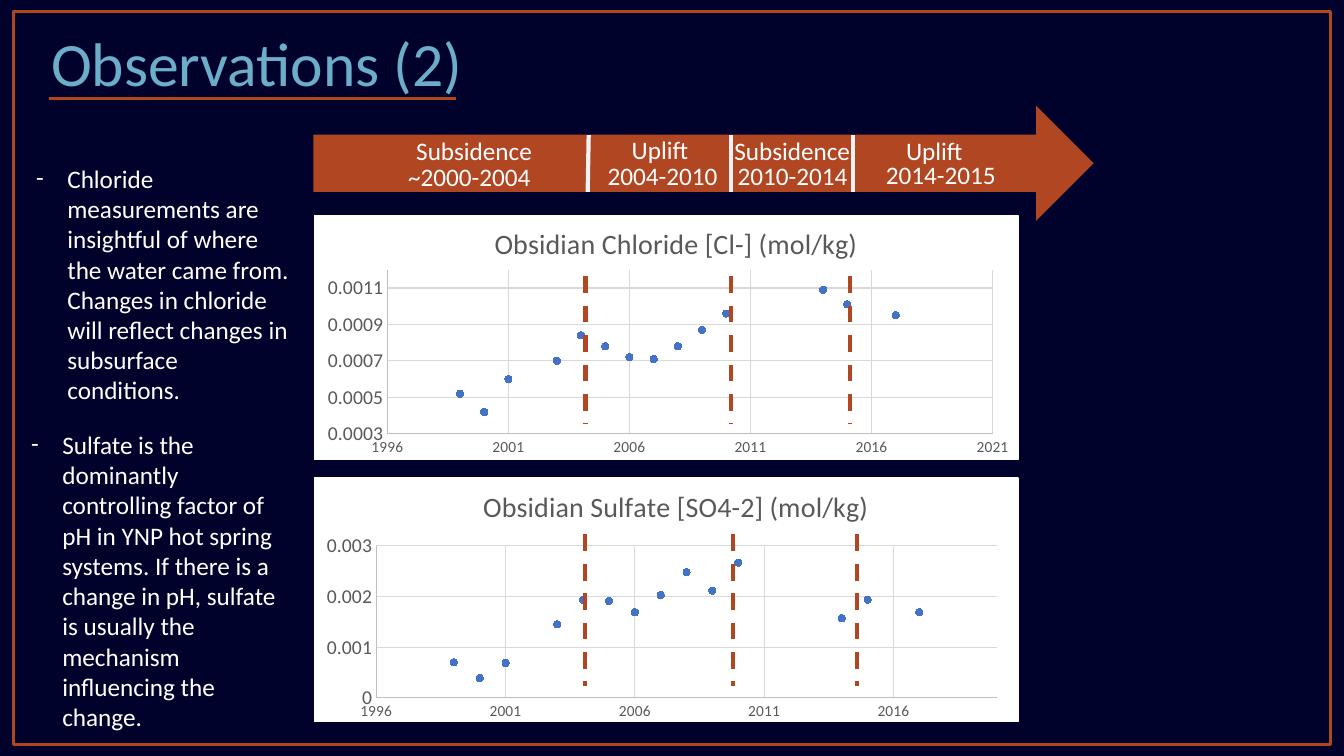
from lxml.etree import SubElement
from pptx import Presentation
from pptx.chart.data import XyChartData
from pptx.dml.color import RGBColor
from pptx.enum.chart import XL_CHART_TYPE, XL_MARKER_STYLE, XL_TICK_MARK
from pptx.enum.dml import MSO_LINE
from pptx.enum.shapes import MSO_CONNECTOR, MSO_SHAPE
from pptx.enum.text import MSO_ANCHOR
from pptx.oxml import parse_xml
from pptx.oxml.ns import nsdecls, qn
from pptx.util import Pt

NAVY = RGBColor(0x00, 0x02, 0x2C)
SKY = RGBColor(0x6C, 0xAD, 0xCA)
RUST = RGBColor(0xB1, 0x46, 0x23)
WHITE = RGBColor(0xFF, 0xFF, 0xFF)
PALE = RGBColor(0xF2, 0xF2, 0xF2)
GREY = RGBColor(0x59, 0x59, 0x59)
RULE = RGBColor(0xD9, 0xD9, 0xD9)
AXIS = RGBColor(0xBF, 0xBF, 0xBF)
BLUE = RGBColor(0x44, 0x72, 0xC4)
FONT = "Calibri"

YEARS = [*range(1998, 2002), *range(2003, 2011), *range(2012, 2018)]
CHARTS = [
    {
        "title": "Obsidian Chloride [Cl-] (mol/kg)",
        "vals": [None, 0.00052, 0.00042, 0.0006, 0.0007, 0.00084, 0.00078,
                 0.00072, 0.00071, 0.00078, 0.00087, 0.00096, None, None,
                 0.00109, 0.00101, None, 0.00095],
        "span": (1996, 2021, 5), "range": (0.0003, 0.0012, 0.0002),
        "panel": 154.1, "box": (224.6, 145.4, 506.2, 185),
        "head": (0.247, 0.06), "plot": (0.103, 0.256, 0.854, 0.634),
        "marks": (418.3, 522, 607), "ends": (197.3, 303.1),
    },
    {
        "title": "Obsidian Sulfate [SO4-2] (mol/kg)",
        "vals": [None, 0.0007, 0.00039, 0.00069, 0.00145, 0.00193, 0.00191,
                 0.00169, 0.00203, 0.00248, 0.00212, 0.00267, None, None,
                 0.00157, 0.00194, None, 0.00169],
        "span": (1996, 2020, 5), "range": (0, 0.003, 0.001),
        "panel": 341.3, "box": (223.9, 333.4, 498.2, 185),
        "head": (0.236, 0.056), "plot": (0.09, 0.306, 0.89, 0.587),
        "marks": (417.6, 523.4, 612), "ends": (381.6, 490.3),
    },
]
LABELS = [  # text, left, top, width
    ("Subsidence", 290.2, 92.9, 98), ("~2000-2004", 284.4, 111.6, 103),
    ("Uplift", 444.2, 92.5, 55.4), ("2004-2010", 427, 110.9, 93.6),
    ("Subsidence", 517.5, 93.3, 98), ("2010-2014", 519.8, 110.9, 93.6),
    ("Uplift", 640.1, 93.3, 55.4), ("2014-2015", 625.7, 110.2, 93.6),
]
SPLITS = [(420.5, 419.8), (522, 522), (609.1, 609.1)]
NOTES = [
    ("Chloride measurements are insightful of where the water came from. "
     "Changes in chloride will reflect changes in subsurface conditions.",
     (18.7, 113, 198, 203.8)),
    ("Sulfate is the dominantly controlling factor of pH in YNP hot spring "
     "systems. If there is a change in pH, sulfate is usually the mechanism "
     "influencing the change.", (15.1, 303.1, 198, 225.4)),
]

deck = Presentation()
deck.slide_width, deck.slide_height = Pt(960), Pt(540)
slide = deck.slides.add_slide(deck.slide_layouts[6])
slide.background.fill.solid()
slide.background.fill.fore_color.rgb = NAVY
shapes = slide.shapes


def pts(nums):
    return [Pt(n) for n in nums]


def add_box(kind, box, fill=None, line=None, width=1):
    shape = shapes.add_shape(kind, *pts(box))
    shape.shadow.inherit = False
    for paint, tint in ((shape.fill, fill), (shape.line.fill, line)):
        if tint is None:
            paint.background()
        else:
            paint.solid()
            paint.fore_color.rgb = tint
    if line is not None:
        shape.line.width = Pt(width)


def add_line(ends, tint, width, dash=None):
    line = shapes.add_connector(MSO_CONNECTOR.STRAIGHT, *pts(ends))
    line.line.color.rgb = tint
    line.line.width = Pt(width)
    if dash:
        line.line.dash_style = dash
    SubElement(line._element.spPr, qn("a:effectLst"))


def add_text(text, box, size=18, tint=WHITE, wrap=True):
    frame = shapes.add_textbox(*pts(box)).text_frame
    frame.word_wrap = wrap
    para = frame.paragraphs[0]
    run = para.add_run()
    run.text = text
    run.font.size, run.font.name = Pt(size), FONT
    run.font.color.rgb = tint
    return frame


def place(node, index, **parts):
    """Give a chart title or plot area a fixed place, in shares of the chart."""
    for old in node.findall(qn("c:layout")):
        node.remove(old)
    inner = '<c:layoutTarget val="inner"/>' if "w" in parts else ""
    modes = "".join(f'<c:{k}Mode val="edge"/>' for k in "xy")
    sizes = "".join(f'<c:{k} val="{v}"/>' for k, v in parts.items())
    node.insert(index, parse_xml(
        f'<c:layout {nsdecls("c")}><c:manualLayout>{inner}{modes}{sizes}'
        "</c:manualLayout></c:layout>"))


def drop_gaps(root):
    """Leave years without a reading empty in the series."""
    for point in list(root.iter(qn("c:pt"))):
        if point.findtext(qn("c:v")) == "None":
            point.getparent().remove(point)


def style_axis(axis, limits, size):
    axis.minimum_scale, axis.maximum_scale, axis.major_unit = limits
    axis.major_tick_mark = axis.minor_tick_mark = XL_TICK_MARK.NONE
    axis.has_major_gridlines = True
    for line, tint in ((axis.format.line, AXIS),
                       (axis.major_gridlines.format.line, RULE)):
        line.color.rgb = tint
        line.width = Pt(0.75)
    font = axis.tick_labels.font
    font.size, font.name = Pt(size), FONT
    font.color.rgb = GREY
    axis.tick_labels.number_format = "General"
    axis.tick_labels.number_format_is_linked = False


def add_scatter(item):
    data = XyChartData()
    points = data.add_series("Series 1")
    for year, val in zip(YEARS, item["vals"]):
        points.add_data_point(year, val)
    chart = shapes.add_chart(
        XL_CHART_TYPE.XY_SCATTER, *pts(item["box"]), data).chart
    chart.has_legend = False
    chart.font.size, chart.font.name = Pt(10), FONT
    chart.plots[0].vary_by_categories = False
    style_axis(chart.category_axis, item["span"], 11)
    style_axis(chart.value_axis, item["range"], 14)
    chart.has_title = True
    run = chart.chart_title.text_frame.paragraphs[0].add_run()
    run.text = item["title"]
    run.font.size, run.font.name, run.font.bold = Pt(20), FONT, False
    run.font.color.rgb = GREY
    root = chart.element.chart
    drop_gaps(root)
    place(root.find(qn("c:title")), 1, **dict(zip("xy", item["head"])))
    place(root.plotArea, 0, **dict(zip("xywh", item["plot"])))
    series = chart.plots[0].series[0]
    series.smooth = False
    series.format.line.fill.background()
    dot = series.marker
    dot.style, dot.size = XL_MARKER_STYLE.CIRCLE, 5
    dot.format.fill.solid()
    dot.format.fill.fore_color.rgb = BLUE
    dot.format.line.color.rgb = BLUE


head = add_text("Observations (2)", (29.5, -5, 828, 104.4), 44, SKY)
head.vertical_anchor = MSO_ANCHOR.MIDDLE
head.paragraphs[0].line_spacing = 0.9
add_line((35.3, 70.6, 325.4, 70.6), RUST, 2.25)
add_box(MSO_SHAPE.RECTANGLE, (9.4, 7.9, 941, 524.2), line=RUST, width=2.25)

for item in CHARTS:
    add_box(MSO_SHAPE.RECTANGLE, (224.6, item["panel"], 502.6, 174.2),
            WHITE, WHITE)
    add_scatter(item)
    top, end = item["ends"]
    for x in item["marks"]:
        add_line((x, top, x, end), RUST, 3, MSO_LINE.DASH)

add_box(MSO_SHAPE.RIGHT_ARROW, (223.9, 75.6, 557.3, 82.1), RUST)
for top, end in SPLITS:
    add_line((top, 96.5, end, 137), PALE, 3)
for text, x, y, width in LABELS:
    add_text(text, (x, y, width, 29), wrap=False)

for text, box in NOTES:
    props = add_text(text, box).paragraphs[0]._p.get_or_add_pPr()
    props.set("marL", str(Pt(22.3)))
    props.set("indent", str(Pt(-22.3)))
    SubElement(props, qn("a:buFont"), typeface=FONT)
    SubElement(props, qn("a:buChar"), char="-")

deck.save("out.pptx")
